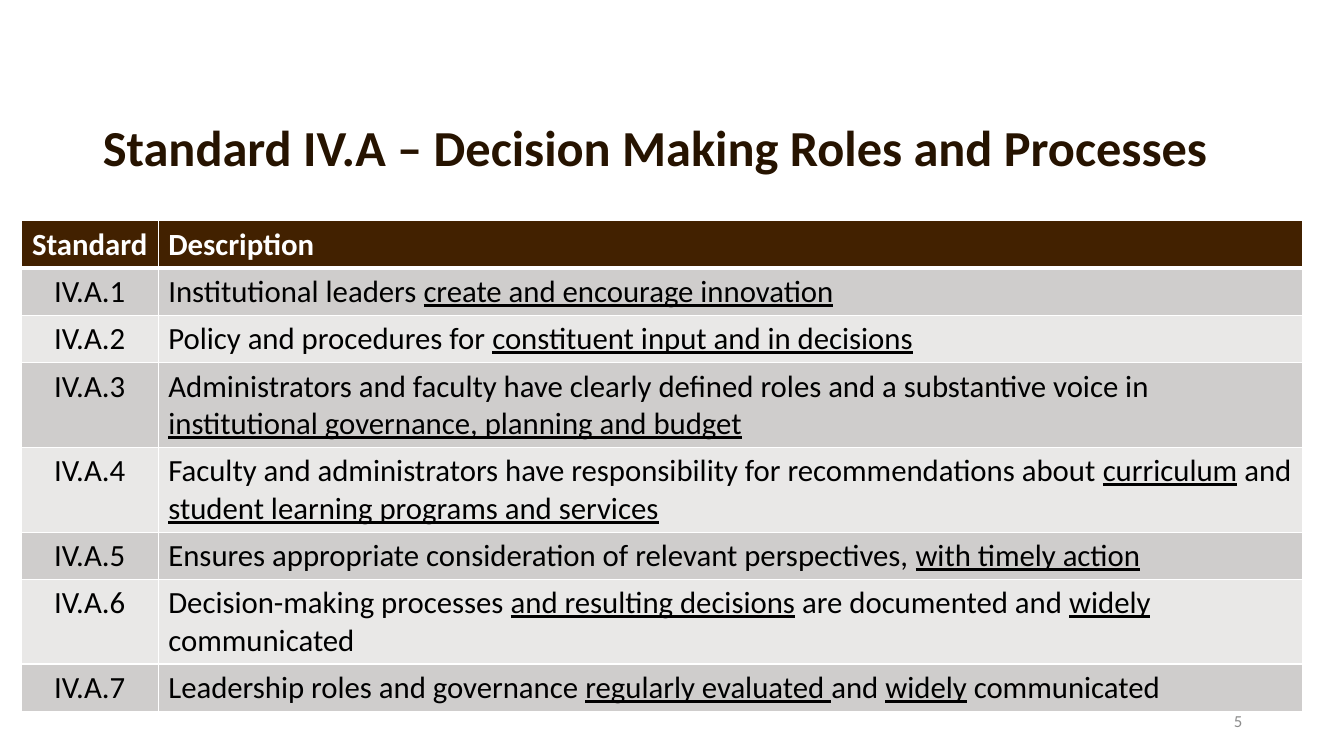
import pptx
import pptx.dml.color
import pptx.enum.text
import pptx.oxml.ns
import pptx.util
from lxml import etree
from pptx.util import Inches

FONT = "Calibri"
ALIGN = pptx.enum.text.PP_ALIGN
MIDDLE = pptx.enum.text.MSO_ANCHOR.MIDDLE
HEADER_FILL = "422100"
BAND_FILLS = ("CFCDCC", "E9E8E7")
SHORT_ROW, TALL_ROW = 0.47, 0.84
TALL_STANDARDS = (3, 4, 6)

# Underlined phrases stand between underscores.
DESCRIPTIONS = [
    "Institutional leaders _create and encourage innovation_",
    "Policy and procedures for _constituent input and in decisions_",
    "Administrators and faculty have clearly defined roles and a substantive voice in "
    "_institutional governance, planning and budget_",
    "Faculty and administrators have responsibility for recommendations about "
    "_curriculum_ and _student learning programs and services_",
    "Ensures appropriate consideration of relevant perspectives, _with timely action_",
    "Decision-making processes _and resulting decisions_ are documented and "
    "_widely _communicated",
    "Leadership roles and governance _regularly evaluated _and _widely_ communicated",
]


def color(value):
    return pptx.dml.color.RGBColor.from_string(value)


def write(para, text, size, text_color, bold=False, align=ALIGN.LEFT):
    para.alignment = align
    for index, part in enumerate(text.split("_")):
        if not part:
            continue
        span = para.add_run()
        span.text = part
        span.font.name = FONT
        span.font.size = pptx.util.Pt(size)
        span.font.bold = bold
        span.font.color.rgb = color(text_color)
        if index % 2:
            span.font.underline = True


def add_title(page, text):
    title = page.shapes.title
    title.left, title.top = Inches(0.92), Inches(0.99)
    title.width, title.height = Inches(11.5), Inches(1)
    frame = title.text_frame
    frame.auto_size = pptx.enum.text.MSO_AUTO_SIZE.NONE
    frame.vertical_anchor = MIDDLE
    para = frame.paragraphs[0]
    para.line_spacing = 0.9
    write(para, text, 36, "261300", bold=True)


def add_page_number(page, number):
    box = page.shapes.add_textbox(Inches(9.42), Inches(6.95), Inches(3), Inches(0.4))
    box.text_frame.word_wrap = True
    box.text_frame.vertical_anchor = MIDDLE
    write(box.text_frame.paragraphs[0], number, 12, "8C8C8C", align=ALIGN.RIGHT)


def set_borders(cell, top, bottom):
    properties = cell._tc.get_or_add_tcPr()
    for side, points in (("L", 1), ("R", 1), ("T", top), ("B", bottom)):
        line = etree.SubElement(properties, pptx.oxml.ns.qn(f"a:ln{side}"),
                                w=str(pptx.util.Pt(points)))
        fill = etree.SubElement(line, pptx.oxml.ns.qn("a:solidFill"))
        etree.SubElement(fill, pptx.oxml.ns.qn("a:srgbClr"), val="FFFFFF")


def add_standards_table(page):
    rows = [("Standard", "Description")]
    rows += [(f"IV.A.{number}", text) for number, text in enumerate(DESCRIPTIONS, 1)]
    heights = [TALL_ROW if number in TALL_STANDARDS else SHORT_ROW
               for number in range(len(rows))]
    table = page.shapes.add_table(len(rows), 2, Inches(0.21), Inches(2.19),
                                  Inches(12.71), Inches(sum(heights))).table
    for column, width in zip(table.columns, (1.36, 11.35)):
        column.width = Inches(width)
    for number, (row, height) in enumerate(zip(rows, heights)):
        table.rows[number].height = Inches(height)
        header = number == 0
        for column, text in enumerate(row):
            cell = table.cell(number, column)
            set_borders(cell, 3 if number == 1 else 1, 3 if header else 1)
            cell.fill.solid()
            cell.fill.fore_color.rgb = color(
                HEADER_FILL if header else BAND_FILLS[(number - 1) % 2])
            write(cell.text_frame.paragraphs[0], text, 22,
                  "FFFFFF" if header else "000000", bold=header,
                  align=ALIGN.LEFT if column else ALIGN.CENTER)


def main():
    deck = pptx.Presentation()
    deck.slide_width, deck.slide_height = Inches(13.33), Inches(7.5)
    page = deck.slides.add_slide(deck.slide_layouts[5])
    add_title(page, "Standard IV.A – Decision Making Roles and Processes")
    add_page_number(page, "5")
    add_standards_table(page)
    deck.save("out.pptx")


if __name__ == "__main__":
    main()
